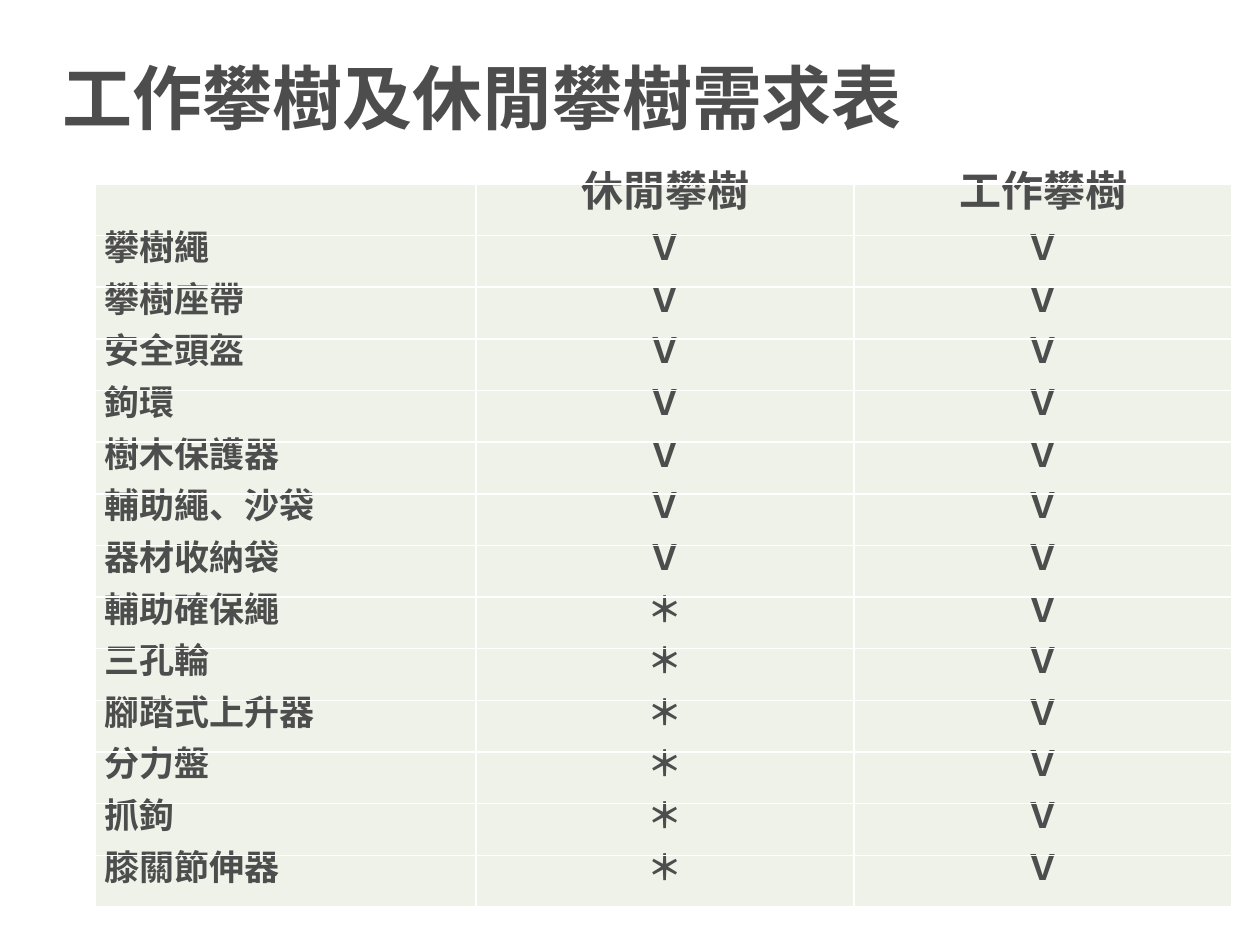
from lxml.etree import SubElement
from pptx import Presentation
from pptx.dml.color import RGBColor
from pptx.enum.text import MSO_ANCHOR, MSO_AUTO_SIZE, PP_ALIGN
from pptx.oxml.ns import qn
from pptx.util import Inches, Pt

FONT = "Noto Sans CJK SC"
INK, PALE_GREEN, WHITE = "4D4D4D", "EEF2E9", "FFFFFF"
ROW_HEIGHT = 0.41
COLUMN_WIDTHS = (3.02, 3, 3)
NEEDED, OPTIONAL = "Ｖ", "＊"

TITLE = "工作攀樹及休閒攀樹需求表"
HEADINGS = ("", "休閒攀樹", "工作攀樹")
SHARED_GEAR = ("攀樹繩", "攀樹座帶", "安全頭盔", "鉤環", "樹木保護器",
               "輔助繩、沙袋", "器材收納袋")
WORK_GEAR = ("輔助確保繩", "三孔輪", "腳踏式上升器", "分力盤", "抓鉤", "膝關節伸器")
JUSTIFIED_GEAR = ("分力盤", "抓鉤")

CELL_FORMAT = {"margin_left": Inches(0.07), "margin_right": Inches(0.07),
               "margin_top": 0, "margin_bottom": 0,
               "vertical_anchor": MSO_ANCHOR.TOP}
PLAIN_TABLE = {"first_row": False, "horz_banding": False}
TITLE_FORMAT = {"word_wrap": False, "auto_size": MSO_AUTO_SIZE.SHAPE_TO_FIT_TEXT,
                "vertical_anchor": MSO_ANCHOR.MIDDLE}


def color(hex_string):
    return RGBColor.from_string(hex_string)


def apply(target, values):
    for name, value in values.items():
        setattr(target, name, value)


def write(paragraph, text, size):
    run = paragraph.add_run()
    run.text = text
    apply(run.font, {"name": FONT, "size": Pt(size), "bold": True})
    run.font.color.rgb = color(INK)
    # East Asian characters take their own typeface entry
    latin = run.font._element.find(qn("a:latin"))
    east_asian = latin.makeelement(qn("a:ea"), {"typeface": FONT})
    latin.addnext(east_asian)


def draw_borders(cell):
    properties = cell._tc.get_or_add_tcPr()
    for index, side in enumerate(("lnL", "lnR", "lnT", "lnB")):
        line = properties.makeelement(qn(f"a:{side}"), {"w": str(Pt(1))})
        fill = SubElement(line, qn("a:solidFill"))
        SubElement(fill, qn("a:srgbClr"), val=WHITE)
        properties.insert(index, line)


def fill_cell(cell, text, size, alignment):
    apply(cell, CELL_FORMAT)
    cell.fill.solid()
    cell.fill.fore_color.rgb = color(PALE_GREEN)
    draw_borders(cell)
    paragraph = cell.text_frame.paragraphs[0]
    apply(paragraph, {"alignment": alignment, "line_spacing": Pt(20)})
    if text:
        write(paragraph, text, size)


def gear_alignment(gear):
    return PP_ALIGN.JUSTIFY if gear in JUSTIFIED_GEAR else PP_ALIGN.LEFT


def add_title(slide):
    box = slide.shapes.add_textbox(Inches(0.4), Inches(0.38), Inches(6.93), Inches(0.77))
    apply(box.text_frame, TITLE_FORMAT)
    write(box.text_frame.paragraphs[0], TITLE, 40)


def add_gear_table(slide):
    rows = [HEADINGS]
    rows += [(gear, NEEDED, NEEDED) for gear in SHARED_GEAR]
    rows += [(gear, OPTIONAL, NEEDED) for gear in WORK_GEAR]
    table = slide.shapes.add_table(
        len(rows), len(COLUMN_WIDTHS), Inches(0.76), Inches(1.46),
        Inches(sum(COLUMN_WIDTHS)), Inches(ROW_HEIGHT * len(rows))).table
    apply(table, PLAIN_TABLE)
    for column, width in zip(table.columns, COLUMN_WIDTHS):
        column.width = Inches(width)
    for r, row in enumerate(rows):
        table.rows[r].height = Inches(ROW_HEIGHT)
        for c, text in enumerate(row):
            alignment = PP_ALIGN.CENTER if c else gear_alignment(text)
            fill_cell(table.cell(r, c), text, 20 if r else 24, alignment)


def main():
    deck = Presentation()
    apply(deck, {"slide_width": Inches(10), "slide_height": Inches(7.5)})
    slide = deck.slides.add_slide(deck.slide_layouts[6])
    # Comparison of gear for leisure and work climbing
    add_gear_table(slide)
    # Heading
    add_title(slide)
    deck.save("out.pptx")


if __name__ == "__main__":
    main()
